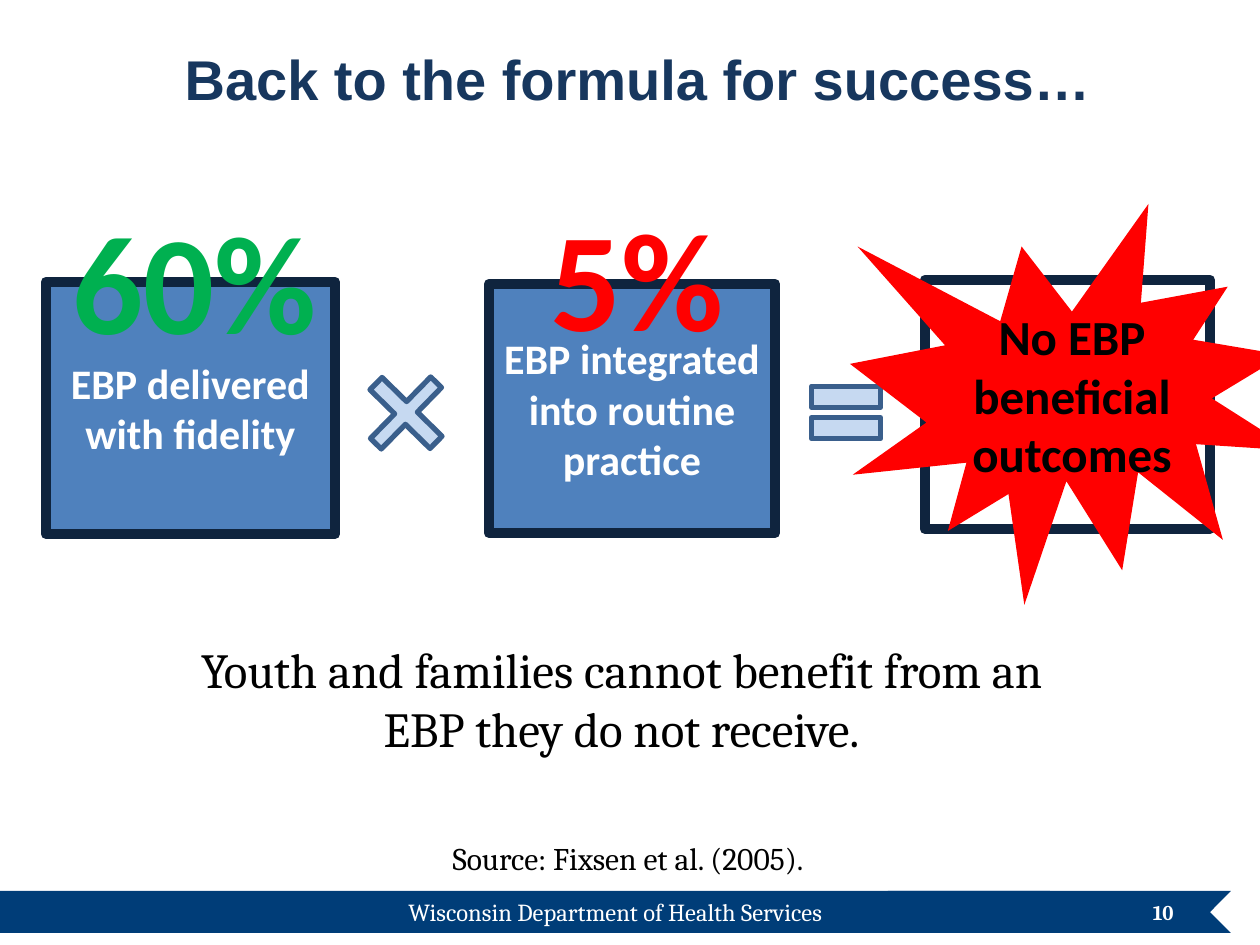
from lxml.etree import SubElement
from pptx import Presentation
from pptx.dml.color import RGBColor
from pptx.enum.shapes import MSO_SHAPE
from pptx.enum.text import MSO_ANCHOR, PP_ALIGN
from pptx.oxml.ns import qn
from pptx.util import Emu, Pt

PX = 914400 / 126
COLORS = {
    "footer": "003D78", "factor": "4F81BD", "frame": "0F243E",
    "operator": "C6D9F1", "operator_edge": "3A5F8C", "title": "17375E",
    "red": "FF0000", "green": "00B050", "white": "FFFFFF", "black": "000000",
}


def px(*lengths):
    """Turn whole pixels into EMU."""
    return [Emu(round(length * PX)) for length in lengths]


def rgb(name):
    """Look up a named colour."""
    return RGBColor.from_string(COLORS[name])


def write(holder, text, size, font, color, bold=False, align=PP_ALIGN.CENTER,
          anchor=MSO_ANCHOR.TOP, before=0, outline=None):
    """Write one formatted paragraph into a shape or text box."""
    frame = holder.text_frame
    frame.word_wrap = True
    frame.vertical_anchor = anchor
    paragraph = frame.paragraphs[0]
    paragraph.alignment = align
    paragraph.space_before = Pt(before)
    run = paragraph.add_run()
    run.text = text
    run.font.size = Pt(size)
    run.font.name = font
    run.font.bold = bold
    run.font.color.rgb = rgb(color)
    if outline:
        properties = run.font._element
        edge = SubElement(properties, qn("a:ln"), w=str(Pt(2.25)))
        fill = SubElement(edge, qn("a:solidFill"))
        SubElement(fill, qn("a:srgbClr"), val=COLORS[outline])
        properties.insert(0, edge)


def add_label(slide, box, text, size, font, color, **style):
    """Add a text box."""
    write(slide.shapes.add_textbox(*px(*box)), text, size, font, color, **style)


def add_figure(slide, kind, box, fill=None, edge=None, width=0, rotation=0):
    """Add a flat preset shape."""
    figure = slide.shapes.add_shape(kind, *px(*box))
    figure.shadow.inherit = False
    figure.rotation = rotation
    if fill:
        figure.fill.solid()
        figure.fill.fore_color.rgb = rgb(fill)
    else:
        figure.fill.background()
    if edge:
        figure.line.color.rgb = rgb(edge)
        figure.line.width = Pt(width)
    else:
        figure.line.fill.background()
    return figure


def add_factor(slide, box, text):
    """Add a framed box naming one factor of the formula."""
    factor = add_figure(slide, MSO_SHAPE.RECTANGLE, box, "factor", "frame", 6)
    write(factor, text, 24, "Calibri", "white", bold=True, anchor=MSO_ANCHOR.MIDDLE)


def add_operator(slide, kind, box, rotation=0):
    """Add an operator sign between the boxes."""
    return add_figure(slide, kind, box, "operator", "operator_edge", 3, rotation)


def add_percentage(slide, box, text, color):
    """Add a large outlined percentage."""
    add_label(slide, box, text, 80, "Calibri", color, bold=True, outline="white")


def add_footer(slide):
    """Add the ribbon with the department name and page number."""
    add_figure(slide, MSO_SHAPE.CHEVRON, (867, 891, 364, 42), "footer", rotation=180)
    add_figure(slide, MSO_SHAPE.RECTANGLE, (0, 891, 1050, 42), "footer")
    add_label(slide, (0, 891, 1231, 42), "Wisconsin Department of Health Services",
              14, "Cambria", "white")
    add_label(slide, (892, 887, 294, 50), "10", 12, "Cambria", "white", bold=True,
              align=PP_ALIGN.RIGHT, anchor=MSO_ANCHOR.MIDDLE)


def add_formula(slide):
    """Add the two factors, the operators and the outcome."""
    add_factor(slide, (489, 284, 286, 249), "EBP integrated into routine practice")
    add_factor(slide, (46, 282, 289, 252), "EBP delivered with fidelity")
    times = add_operator(slide, MSO_SHAPE.CROSS, (364, 370, 84, 86), rotation=44.4)
    times.adjustments[0] = 0.41
    add_operator(slide, MSO_SHAPE.MATH_EQUAL, (799, 368, 94, 89))
    add_figure(slide, MSO_SHAPE.RECTANGLE, (925, 280, 285, 249), edge="frame", width=6)
    add_figure(slide, MSO_SHAPE.EXPLOSION1, (850, 204, 444, 401), "red")
    add_label(slide, (916, 300, 312, 190), "No EBP beneficial outcomes",
              28, "Calibri", "black", bold=True)
    add_percentage(slide, (29, 188, 331, 183), "60%", "green")
    add_percentage(slide, (472, 185, 331, 183), "5%", "red")


def main():
    """Build and save the slide."""
    deck = Presentation()
    deck.slide_width, deck.slide_height = px(1260, 945)
    slide = deck.slides.add_slide(deck.slide_layouts[6])
    add_footer(slide)
    add_label(slide, (71, 38, 1134, 91), "Back to the formula for success…",
              32, "Arial", "title", bold=True)
    add_formula(slide)
    add_label(slide, (158, 633, 927, 222),
              "Youth and families cannot benefit from an EBP they do not receive.",
              28, "Cambria", "black", before=5.6)
    add_label(slide, (112, 833, 1038, 50), "Source: Fixsen et al. (2005). ",
              18, "Cambria", "black")
    deck.save("out.pptx")


if __name__ == "__main__":
    main()
